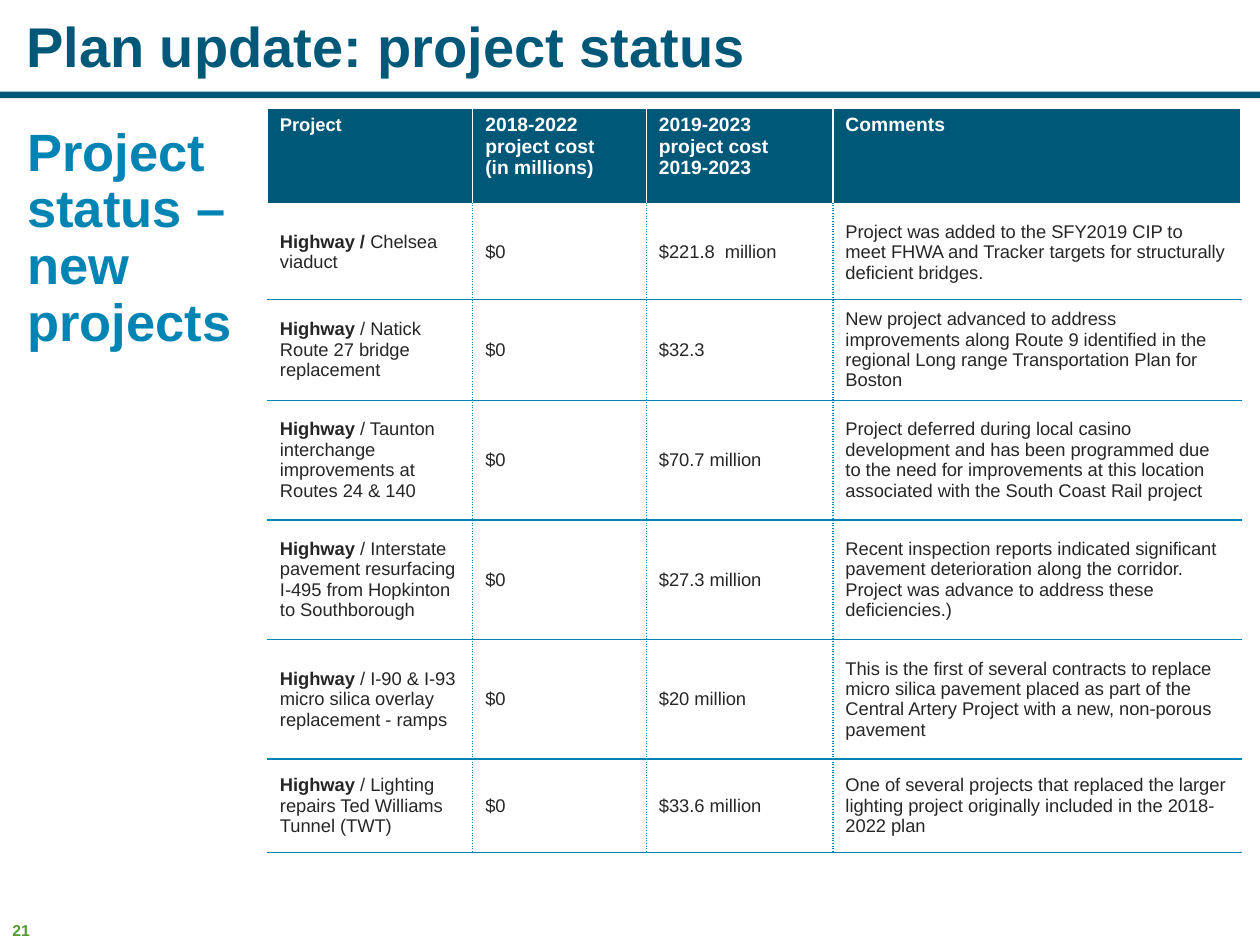
from dataclasses import dataclass

from lxml import etree
from pptx import Presentation
from pptx.dml.color import RGBColor
from pptx.enum import shapes, text
from pptx.oxml import ns
from pptx.util import Cm, Pt


@dataclass(frozen=True)
class Theme:
    font: str = "Arial"
    navy: str = "005878"
    teal: str = "0084B4"
    green: str = "509E2F"
    ink: str = "262626"
    white: str = "FFFFFF"
    title: float = 32
    side: float = 30
    header: float = 11
    body: float = 10.5
    number: float = 9


theme = Theme()


def style(paragraph, size, color, bold=True):
    for run in paragraph.runs:
        run.font.name = theme.font
        run.font.size = Pt(size)
        run.font.bold = bold
        run.font.color.rgb = RGBColor.from_string(color)


def set_border(cell, side, color, width=1, dash="solid"):
    """Side is L, R, T or B; call in that order and before filling the cell."""
    line = etree.SubElement(cell._tc.get_or_add_tcPr(), ns.qn(f"a:ln{side}"), w=str(Pt(width)))
    fill = etree.SubElement(line, ns.qn("a:solidFill"))
    etree.SubElement(fill, ns.qn("a:srgbClr"), val=color)
    etree.SubElement(line, ns.qn("a:prstDash"), val=dash)


headers = ["Project", "2018-2022 project cost\n(in millions)",
           "2019-2023 project cost\n2019-2023", "Comments"]
# Bold lead, project name, new cost, comment
projects = [
    ("Highway / ", "Chelsea viaduct", "$221.8  million",
     "Project was added to the SFY2019 CIP to meet FHWA and Tracker targets for "
     "structurally deficient bridges."),
    ("Highway ", "/ Natick Route 27 bridge replacement", "$32.3",
     "New project advanced to address improvements along Route 9 identified in the "
     "regional Long range Transportation Plan for Boston"),
    ("Highway ", "/ Taunton interchange improvements at Routes 24 & 140", "$70.7 million",
     "Project deferred during local casino development and has been programmed due to the "
     "need for improvements at this location associated with the South Coast Rail project"),
    ("Highway ", "/ Interstate pavement resurfacing I-495 from Hopkinton to Southborough",
     "$27.3 million",
     "Recent inspection reports indicated significant pavement deterioration along the "
     "corridor. Project was advance to address these deficiencies.)"),
    ("Highway ", "/ I-90 & I-93 micro silica overlay replacement - ramps", "$20 million",
     "This is the first of several contracts to replace micro silica pavement placed as part "
     "of the Central Artery Project with a new, non-porous pavement"),
    ("Highway ", "/ Lighting repairs Ted Williams Tunnel (TWT)", "$33.6 million",
     "One of several projects that replaced the larger lighting project originally included "
     "in the 2018-2022 plan"),
]
column_widths = [4.14, 3.5, 3.76, 8.23]
row_heights = [1.95, 1.91, 2.03, 2.41, 2.41, 2.41, 1.88]

prs = Presentation()
prs.slide_width, prs.slide_height = Cm(25.4), Cm(19.05)
slide = prs.slides.add_slide(prs.slide_layouts[6])

rule = slide.shapes.add_shape(shapes.MSO_SHAPE.RECTANGLE, 0, Cm(1.85), Cm(25.4), Cm(0.13))
rule.shadow.inherit = False
rule.fill.solid()
rule.fill.fore_color.rgb = RGBColor.from_string(theme.navy)
rule.line.fill.background()

page_number = slide.shapes.add_textbox(0, Cm(18.44), Cm(0.91), Cm(0.64)).text_frame
page_number.word_wrap = False
page_number.text = "21"
style(page_number.paragraphs[0], theme.number, theme.green)

status = slide.shapes.add_table(
    len(row_heights), len(column_widths), Cm(5.39), Cm(2.18),
    Cm(sum(column_widths)), Cm(sum(row_heights))).table
status.horz_banding = False
for column, width in zip(status.columns, column_widths):
    column.width = Cm(width)
for row, height in zip(status.rows, row_heights):
    row.height = Cm(height)

last_column = len(headers) - 1
for c, heading in enumerate(headers):
    cell = status.cell(0, c)
    cell.text = heading
    for paragraph in cell.text_frame.paragraphs:
        style(paragraph, theme.body if c == 0 else theme.header, theme.white)
    for side in "LRT":
        set_border(cell, side, theme.white)
    set_border(cell, "B", theme.white, 3)
    cell.fill.solid()
    cell.fill.fore_color.rgb = RGBColor.from_string(theme.navy)

for r, (lead, name, cost, comment) in enumerate(projects, start=1):
    for c, content in enumerate([lead, "$0", cost, comment]):
        cell = status.cell(r, c)
        cell.vertical_anchor = text.MSO_ANCHOR.MIDDLE
        cell.text = content
        paragraph = cell.text_frame.paragraphs[0]
        if c == 0:
            paragraph.add_run().text = name
        style(paragraph, theme.body, theme.ink, bold=False)
        if c == 0:
            paragraph.runs[0].font.bold = True
        for side, outer in (("L", c == 0), ("R", c == last_column)):
            if outer:
                set_border(cell, side, theme.white)
            else:
                set_border(cell, side, theme.teal, dash="sysDot")
        set_border(cell, "T", theme.white if r == 1 else theme.teal)
        set_border(cell, "B", theme.teal)
        cell.fill.background()

side_heading = slide.shapes.add_textbox(Cm(0.25), Cm(2.24), Cm(5.16), Cm(16.2)).text_frame
side_heading.word_wrap = True
side_heading.margin_left = side_heading.margin_right = Cm(0.3)
side_heading.margin_top = side_heading.margin_bottom = Cm(0.3)
side_heading.text = "Project status – new projects"
side_heading.paragraphs[0].line_spacing = 0.9
style(side_heading.paragraphs[0], theme.side, theme.teal)

title = slide.shapes.add_textbox(Cm(0.28), Cm(0.2), Cm(24.77), Cm(1.6)).text_frame
title.word_wrap = True
title.vertical_anchor = text.MSO_ANCHOR.MIDDLE
title.text = "Plan update: project status"
title.paragraphs[0].line_spacing = 0.9
style(title.paragraphs[0], theme.title, theme.navy)

prs.save("out.pptx")
